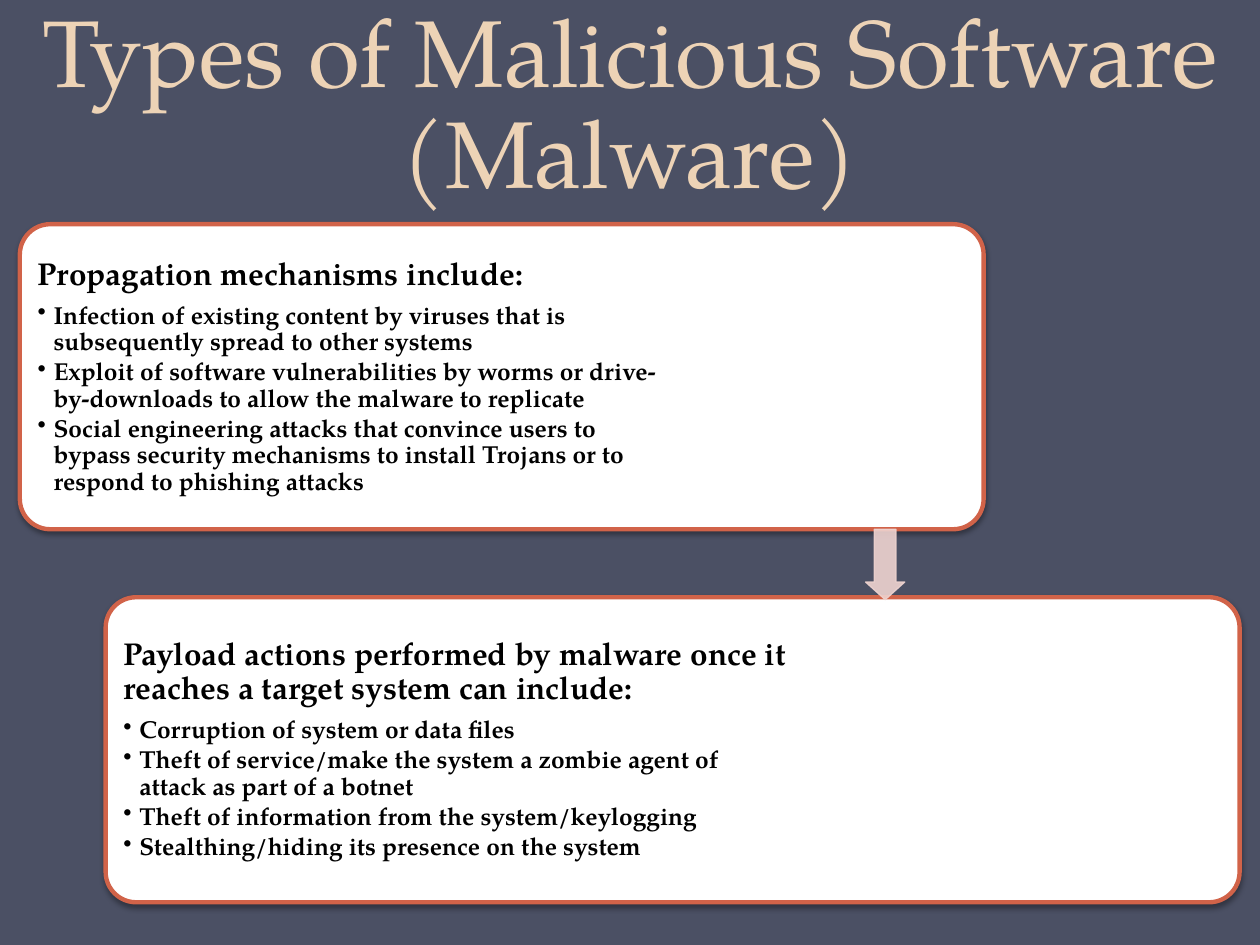
from lxml.etree import SubElement as Sub
from pptx import Presentation
from pptx.dml.color import RGBColor
from pptx.enum.shapes import MSO_SHAPE as Kind
from pptx.enum.text import MSO_ANCHOR as Anchor, MSO_AUTO_SIZE as Fit, PP_ALIGN as Align
from pptx.oxml.ns import qn
from pptx.util import Cm, Pt

SLATE = RGBColor(0x4B, 0x50, 0x64)
SAND = RGBColor(0xED, 0xD3, 0xB6)
RUST = RGBColor(0xD1, 0x63, 0x49)
ROSE = RGBColor(0xEE, 0xD3, 0xD0)
WHITE = RGBColor(0xFF, 0xFF, 0xFF)
BLACK = RGBColor(0, 0, 0)

CARDS = [
    ((0.4, 4.52, 19.43), 13.08, "Propagation mechanisms include:", [
        "Infection of existing content by viruses that is subsequently spread to other systems",
        "Exploit of software vulnerabilities by worms or drive-by-downloads to allow the malware to replicate",
        "Social engineering attacks that convince users to bypass security mechanisms "
        "to install Trojans or to respond to phishing attacks",
    ]),
    ((2.13, 12.04, 22.86), 13.77,
     "Payload actions performed by malware once it reaches a target system can include:", [
        "Corruption of system or data files",
        "Theft of service/make the system a zombie agent of attack as part of a botnet",
        "Theft of information from the system/keylogging",
        "Stealthing/hiding its presence on the system",
    ]),
]


class Deck:
    face = "TeX Gyre Pagella"
    high = 6.15
    pad = 0.18

    def __init__(self):
        self.pres = Presentation()
        self.pres.slide_width, self.pres.slide_height = Cm(25.4), Cm(19.05)
        self.slide = self.pres.slides.add_slide(self.pres.slide_layouts[5])
        fill = self.slide.background.fill
        fill.solid()
        fill.fore_color.rgb = SLATE

    def style(self, para, size, color, bold=False):
        for run in para.runs:
            font = run.font
            font.name, font.size, font.bold = self.face, Pt(size), bold
            font.color.rgb = color

    def title(self, text):
        shape = self.slide.shapes.title
        shape.left, shape.top = Cm(0), Cm(-0.64)
        shape.width, shape.height = Cm(25.4), Cm(4.95)
        frame = shape.text_frame
        frame.text = text
        frame.word_wrap, frame.auto_size = True, Fit.NONE
        frame.vertical_anchor = Anchor.BOTTOM
        para = frame.paragraphs[0]
        para.alignment, para.line_spacing = Align.CENTER, Pt(58)
        self.style(para, 54, SAND)

    def shape(self, kind, box, fill, line, width, rates):
        shape = self.slide.shapes.add_shape(kind, *map(Cm, box))
        shape.shadow.inherit = False
        shape.fill.solid()
        shape.fill.fore_color.rgb = fill
        shape.line.color.rgb = line
        shape.line.width = Pt(width)
        for spot, rate in enumerate(rates):
            shape.adjustments[spot] = rate
        return shape

    def fade(self, shape, share):
        for color in shape.element.spPr.iter(qn("a:srgbClr")):
            Sub(color, qn("a:alpha"), val=str(share * 1000))

    def shade(self, shape):
        list_ = shape.element.spPr.find(qn("a:effectLst"))
        drop = Sub(list_, qn("a:outerShdw"), blurRad=str(Pt(3.1)), dist=str(Pt(1.8)),
                   dir="5400000", rotWithShape="0")
        color = Sub(drop, qn("a:srgbClr"), val=str(BLACK))
        Sub(color, qn("a:alpha"), val="35000")

    def bullet(self, para):
        para.level = 1
        props = para._p.get_or_add_pPr()
        props.set("marL", str(Cm(0.32)))
        props.set("indent", str(Cm(-0.32)))
        Sub(props, qn("a:buChar"), char="•")

    def text(self, box, head, items):
        frame = self.slide.shapes.add_textbox(*map(Cm, box)).text_frame
        frame.word_wrap, frame.vertical_anchor = True, Anchor.MIDDLE
        frame.margin_left = frame.margin_right = Cm(self.pad)
        frame.margin_top = frame.margin_bottom = Cm(self.pad)
        frame.text = "\n".join([head, *items])
        for spot, para in enumerate(frame.paragraphs):
            size, gap = (14, 2.1) if spot else (18, 6.3)
            para.line_spacing, para.space_after = 0.9, Pt(gap)
            self.style(para, size, BLACK, True)
            if spot:
                self.bullet(para)

    def card(self, place, wide, head, items):
        left, top, width = place
        shape = self.shape(Kind.ROUNDED_RECTANGLE, (left, top, width, self.high),
                           WHITE, RUST, 2.5, [0.1])
        self.shade(shape)
        pad = self.pad
        self.text((left + pad, top + pad, wide, self.high - 2 * pad), head, items)

    def arrow(self, box):
        shape = self.shape(Kind.DOWN_ARROW, box, ROSE, ROSE, 0.75, [0.55, 0.45])
        self.fade(shape, 90)


def main():
    deck = Deck()
    deck.title("Types of Malicious Software (Malware)")
    for card in CARDS:
        deck.card(*card)
    deck.arrow((17.45, 10.67, 0.79, 1.42))
    deck.pres.save("out.pptx")


if __name__ == "__main__":
    main()
